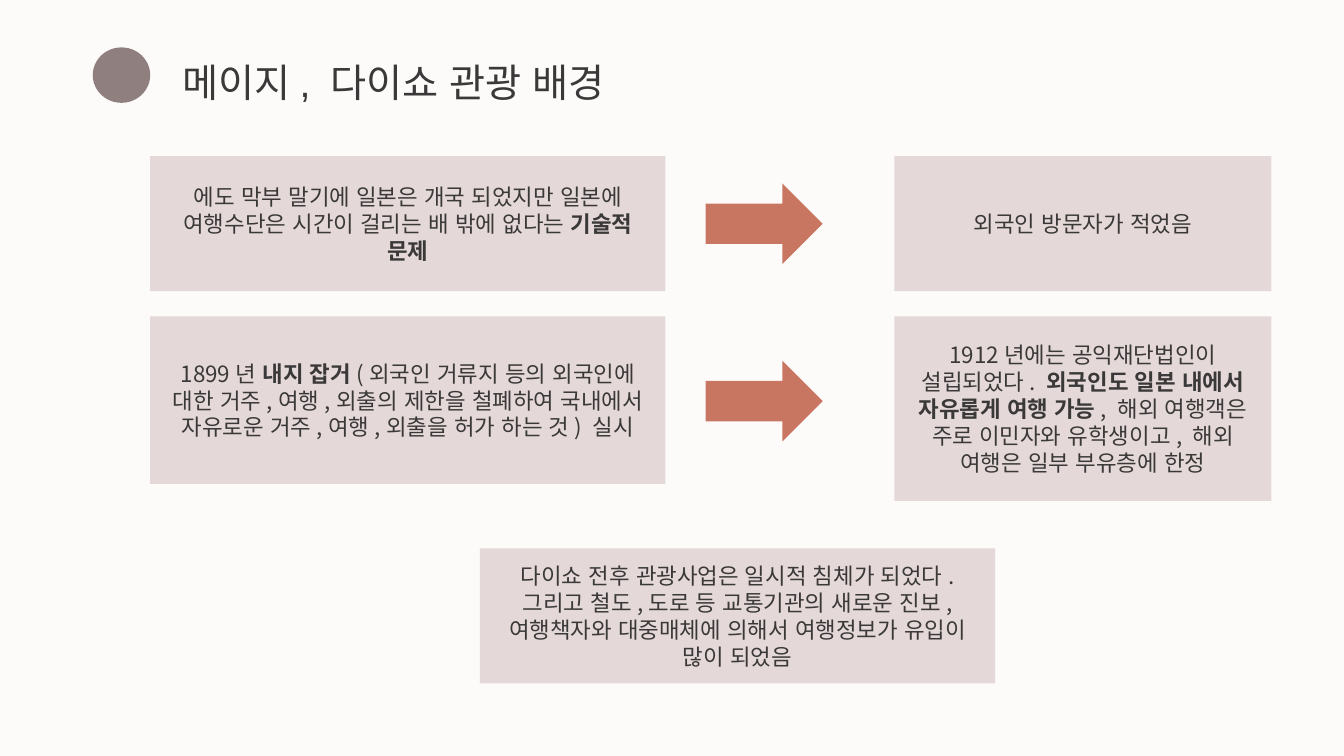
import pptx
import pptx.dml.color
import pptx.enum.lang
import pptx.enum.shapes
import pptx.enum.text
import pptx.oxml.ns
import pptx.util
import lxml.etree
from dataclasses import dataclass
from pptx.util import Inches

SHAPES = pptx.enum.shapes.MSO_SHAPE


@dataclass(frozen=True)
class Theme:
    background: str = "FCFBFA"
    accent: str = "8F807F"
    box: str = "E4D9D8"
    arrow: str = "C87661"
    text: str = "3A3838"
    title_font: str = "Arial"
    body_font: str = "Noto Sans CJK KR"
    title_size: int = 28
    body_size: int = 16
    line_spacing: float = 1.2


class SlideBuilder:
    def __init__(self, slide, theme):
        self.slide = slide
        self.theme = theme
        fill = slide.background.fill
        fill.solid()
        fill.fore_color.rgb = self.color(theme.background)

    def color(self, value):
        return pptx.dml.color.RGBColor.from_string(value)

    def shape(self, kind, left, top, width, height, fill):
        shape = self.slide.shapes.add_shape(
            kind, Inches(left), Inches(top), Inches(width), Inches(height))
        shape.shadow.inherit = False
        shape.fill.solid()
        shape.fill.fore_color.rgb = self.color(fill)
        shape.line.fill.background()
        return shape

    def add_runs(self, paragraph, runs, font_name, size):
        """Add (text, bold) runs, with the body font for Korean letters."""
        paragraph.line_spacing = pptx.util.Pt(size * self.theme.line_spacing)
        for text, bold in runs:
            run = paragraph.add_run()
            run.text = text
            run.font.name = font_name
            run.font.size = pptx.util.Pt(size)
            run.font.bold = bold
            run.font.color.rgb = self.color(self.theme.text)
            run.font.language_id = pptx.enum.lang.MSO_LANGUAGE_ID.KOREAN
            east_asian = lxml.etree.SubElement(
                run.font._element, pptx.oxml.ns.qn("a:ea"))
            east_asian.set("typeface", self.theme.body_font)

    def title(self, text, left, top, width, height):
        box = self.slide.shapes.add_textbox(
            Inches(left), Inches(top), Inches(width), Inches(height))
        frame = box.text_frame
        frame.word_wrap = False
        frame.auto_size = pptx.enum.text.MSO_AUTO_SIZE.SHAPE_TO_FIT_TEXT
        self.add_runs(frame.paragraphs[0], [(text, False)],
                      self.theme.title_font, self.theme.title_size)

    def box(self, runs, left, top, width, height):
        frame = self.shape(SHAPES.RECTANGLE, left, top, width, height,
                           self.theme.box).text_frame
        frame.word_wrap = True
        frame.vertical_anchor = pptx.enum.text.MSO_ANCHOR.MIDDLE
        paragraph = frame.paragraphs[0]
        paragraph.alignment = pptx.enum.text.PP_ALIGN.CENTER
        self.add_runs(paragraph, runs, self.theme.body_font, self.theme.body_size)

    def arrow(self, left, center, width, height):
        self.shape(SHAPES.RIGHT_ARROW, left, center - height / 2, width, height,
                   self.theme.arrow)


CAUSE_LEFT, CAUSE_WIDTH = 1.49, 5.11
EFFECT_LEFT, EFFECT_WIDTH = 8.87, 3.74
BOX_HEIGHT = 1.34

# Each row: top, cause height, effect height, arrow center, cause runs, effect runs
ROWS = [
    (1.55, BOX_HEIGHT, BOX_HEIGHT, 2.22,
     [("에도 막부 말기에 일본은 개국 되었지만 일본에 여행수단은 시간이 걸리는 배 밖에 없다는 ", False),
      ("기술적 문제", True)],
     [("외국인 방문자가 적었음", False)]),
    (3.14, 1.66, 1.83, 3.98,
     [("1899년 ", False),
      ("내지 잡거", True),
      ("(외국인 거류지 등의 외국인에 대한 거주,여행,외출의 제한을 철폐하여 "
       "국내에서 자유로운 거주,여행,외출을 허가 하는 것) 실시", False)],
     [("1912년에는 공익재단법인이 설립되었다. ", False),
      ("외국인도 일본 내에서 자유롭게 여행 가능", True),
      (", 해외 여행객은 주로 이민자와 유학생이고, 해외 여행은 일부 부유층에 한정", False)]),
]
CONCLUSION = [("다이쇼 전후 관광사업은 일시적 침체가 되었다. 그리고 철도,도로 등 교통기관의 "
               "새로운 진보, 여행책자와 대중매체에 의해서 여행정보가 유입이 많이 되었음", False)]


def main():
    presentation = pptx.Presentation()
    presentation.slide_width = Inches(13.33)
    presentation.slide_height = Inches(7.5)
    slide = presentation.slides.add_slide(presentation.slide_layouts[6])
    builder = SlideBuilder(slide, Theme())

    builder.shape(SHAPES.OVAL, 0.92, 0.47, 0.57, 0.55, builder.theme.accent)
    builder.title("메이지, 다이쇼 관광 배경", 1.71, 0.53, 4.56, 0.57)
    for top, cause_height, effect_height, arrow_center, cause, effect in ROWS:
        builder.box(cause, CAUSE_LEFT, top, CAUSE_WIDTH, cause_height)
        builder.arrow(7, arrow_center, 1.16, 0.8)
        builder.box(effect, EFFECT_LEFT, top, EFFECT_WIDTH, effect_height)
    builder.box(CONCLUSION, 4.76, 5.44, CAUSE_WIDTH, BOX_HEIGHT)

    presentation.save("out.pptx")


if __name__ == "__main__":
    main()
